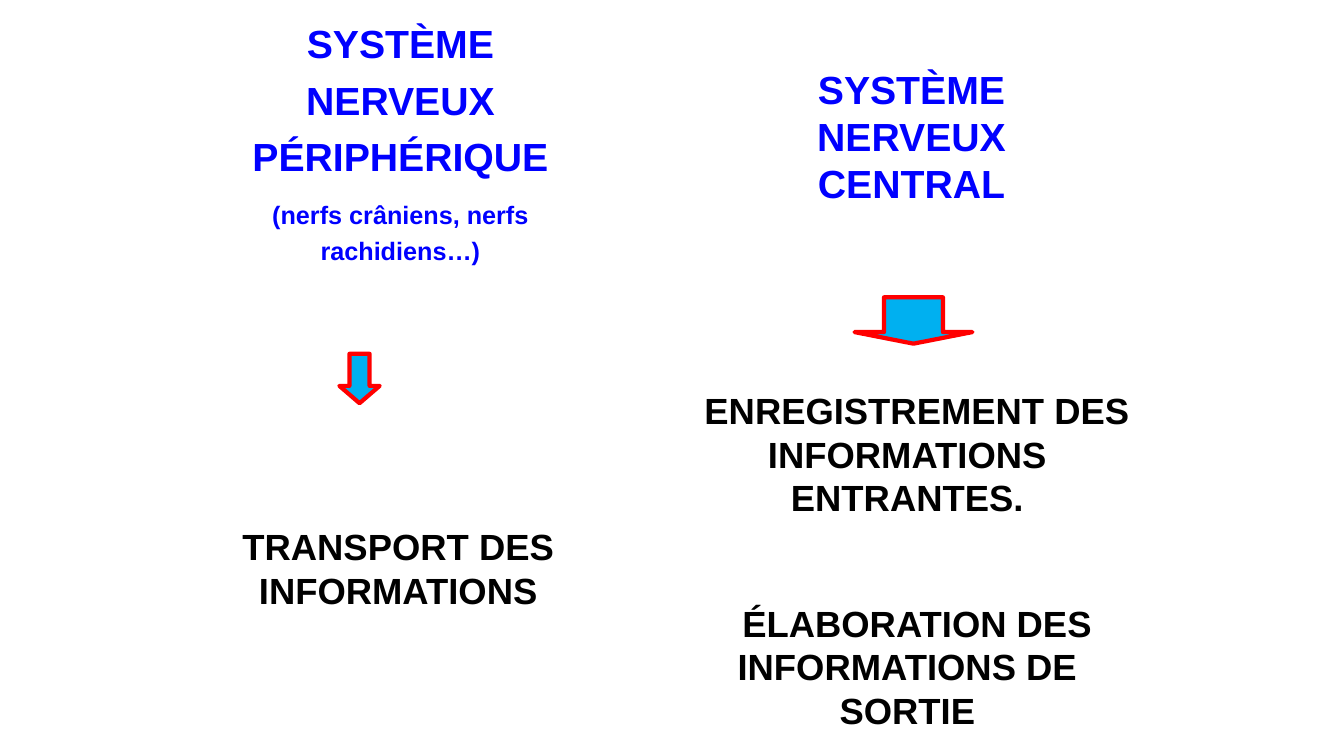
import pptx
import pptx.util
import pptx.dml.color
import pptx.enum.shapes
import pptx.enum.text

WIDTH, HEIGHT = 13.33, 7.5
BLUE, BLACK, CYAN, RED = "0000FF", "000000", "00B0F0", "FF0000"


def rgb(value):
    return pptx.dml.color.RGBColor.from_string(value)


def place(column, box):
    left, top, width, height = box
    return [pptx.util.Inches(v) for v in (column + left, top, width, height)]


def add_statement(slide, column, box, lines, color, spacing=1.0, gap=0, indent=0):
    frame = slide.shapes.add_textbox(*place(column, box)).text_frame
    frame.word_wrap = True
    frame.text = "\n".join(text for text, size in lines)
    for index, (paragraph, (text, size)) in enumerate(zip(frame.paragraphs, lines)):
        paragraph.alignment = pptx.enum.text.PP_ALIGN.CENTER
        paragraph.line_spacing = spacing
        paragraph.space_before = pptx.util.Pt(gap if index else 0)
        if indent:
            properties = paragraph._p.get_or_add_pPr()
            properties.set("marL", "0")
            properties.set("indent", str(pptx.util.Pt(indent)))
        font = paragraph.runs[0].font
        font.name = "Arial"
        font.size = pptx.util.Pt(size)
        font.bold = True
        font.color.rgb = rgb(color)


def add_down_arrow(slide, column, box, head):
    arrow = slide.shapes.add_shape(
        pptx.enum.shapes.MSO_SHAPE.DOWN_ARROW, *place(column, box))
    arrow.adjustments[0] = 0.5
    arrow.adjustments[1] = head
    arrow.shadow.inherit = False
    arrow.fill.solid()
    arrow.fill.fore_color.rgb = rgb(CYAN)
    arrow.line.color.rgb = rgb(RED)
    arrow.line.width = pptx.util.Pt(3)


def add_peripheral_system(slide, column):
    add_statement(slide, column, (0.48, 0.05, 3.25, 2.66),
                  [("SYSTÈME NERVEUX PÉRIPHÉRIQUE", 28),
                   ("(nerfs crâniens, nerfs rachidiens…)", 18)],
                  BLUE, spacing=1.2, gap=10)
    add_down_arrow(slide, column, (1.5, 3.51, 0.4, 0.49), 0.43)
    add_statement(slide, column, (0, 5.15, 4.17, 0.97),
                  [("TRANSPORT DES INFORMATIONS", 26)], BLACK)


def add_central_system(slide, column):
    add_statement(slide, column, (0.75, 0.6, 3.25, 1.5),
                  [("SYSTÈME NERVEUX CENTRAL", 28)], BLUE)
    add_down_arrow(slide, column, (1.81, 2.95, 1.17, 0.46), 0.25)
    add_statement(slide, column, (0, 3.8, 4.67, 3.57),
                  [("ENREGISTREMENT DES INFORMATIONS ENTRANTES.", 26),
                   ("ÉLABORATION DES INFORMATIONS DE SORTIE", 26)],
                  BLACK, gap=58.5, indent=14)


def main():
    presentation = pptx.Presentation()
    presentation.slide_width = pptx.util.Inches(WIDTH)
    presentation.slide_height = pptx.util.Inches(HEIGHT)
    slide = presentation.slides.add_slide(presentation.slide_layouts[6])
    add_peripheral_system(slide, WIDTH * 0.14)
    add_central_system(slide, WIDTH * 0.5)
    presentation.save("out.pptx")


if __name__ == "__main__":
    main()
